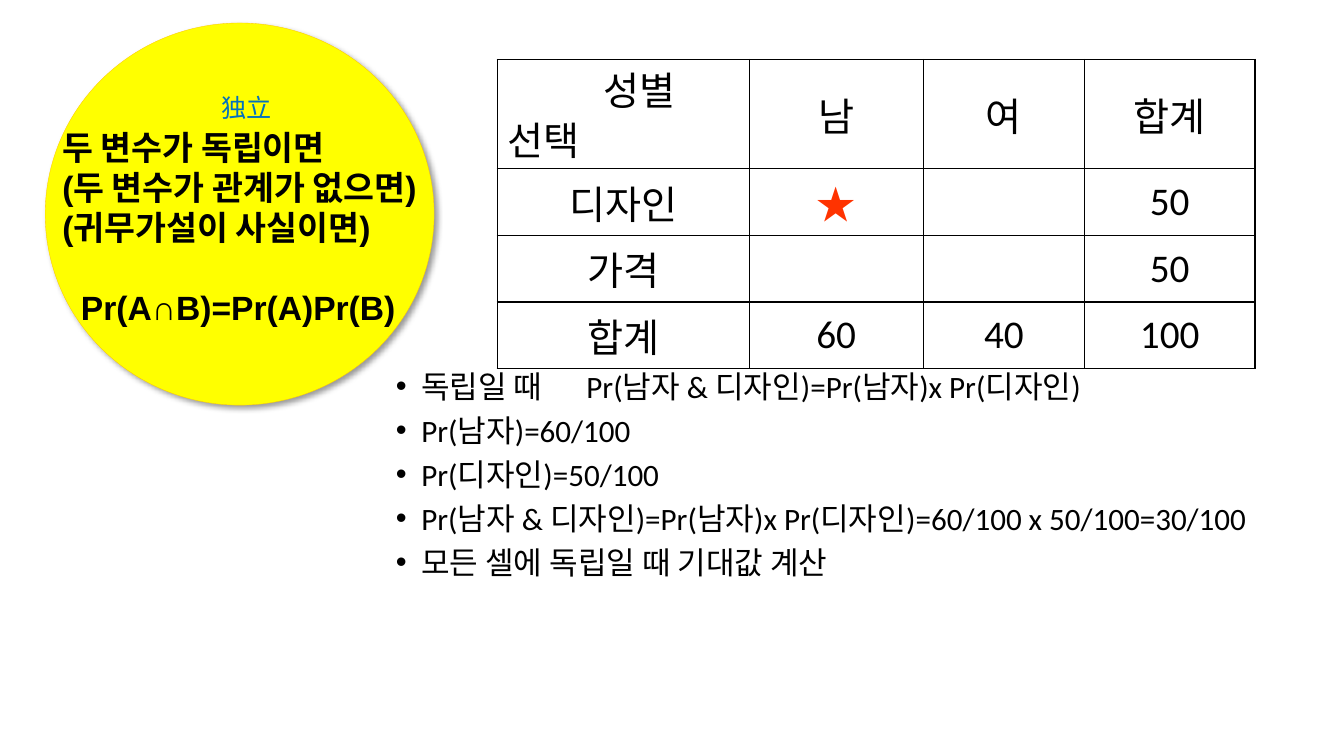
from dataclasses import dataclass

from lxml.etree import SubElement
from pptx import Presentation
from pptx.dml.color import RGBColor
from pptx.enum.shapes import MSO_SHAPE
from pptx.enum.text import MSO_ANCHOR, PP_ALIGN
from pptx.oxml.ns import qn
from pptx.util import Cm, Pt

RULE = ["두 변수가 독립이면", "(두 변수가 관계가 없으면)", "(귀무가설이 사실이면)"]
FORMULA = "Pr(A∩B)=Pr(A)Pr(B)"
LABEL = "独立"
STEPS = [
    "독립일 때\tPr(남자 & 디자인)=Pr(남자)x Pr(디자인)",
    "Pr(남자)=60/100",
    "Pr(디자인)=50/100",
    "Pr(남자 & 디자인)=Pr(남자)x Pr(디자인)=60/100 x 50/100=30/100",
    "모든 셀에 독립일 때 기대값 계산",
]
STAR = "★"
COUNTS = [
    ["성별\n선택", "남", "여", "합계"],
    ["디자인", STAR, "", "50"],
    ["가격", "", "", "50"],
    ["합계", "60", "40", "100"],
]
COLUMN_WIDTHS = [6.35, 4.39, 4.06, 4.3]
ROW_HEIGHTS = [2.75, 1.68, 1.68, 1.68]


@dataclass(frozen=True)
class Theme:
    ink: str = "000000"
    disc: str = "FFFF00"
    rim: str = "FFCC00"
    label: str = "0070C0"
    star: str = "FF3300"
    heading_font: str = "Arial"
    body_font: str = "Calibri"
    star_font: str = "Noto Sans CJK KR"
    rule_size: float = 24
    label_size: float = 18
    step_size: float = 22.2
    count_size: float = 28


THEME = Theme()


def style(paragraph, font, size, color=THEME.ink, bold=False):
    paragraph.font.name = font
    paragraph.font.size = Pt(size)
    paragraph.font.bold = bold
    paragraph.font.color.rgb = RGBColor.from_string(color)


def add_color(parent, color):
    fill = SubElement(parent, qn("a:solidFill"))
    return SubElement(fill, qn("a:srgbClr"), val=color)


def add_text(slide, left, top, width, height, lines, wrap=True):
    frame = slide.shapes.add_textbox(Cm(left), Cm(top), Cm(width), Cm(height)).text_frame
    frame.word_wrap = wrap
    frame.text = "\n".join(lines)
    return frame


def add_disc(slide):
    disc = slide.shapes.add_shape(MSO_SHAPE.OVAL, Cm(1.14), Cm(0.58), Cm(9.8), Cm(9.63))
    disc.fill.solid()
    disc.fill.fore_color.rgb = RGBColor.from_string(THEME.disc)
    disc.line.color.rgb = RGBColor.from_string(THEME.rim)
    disc.line.width = Pt(0.25)
    disc.shadow.inherit = False
    effects = disc.element.spPr.find(qn("a:effectLst"))
    shadow = SubElement(effects, qn("a:outerShdw"), blurRad=str(Pt(4)), dist=str(Pt(3)),
                        dir="2700000", algn="tl", rotWithShape="0")
    tint = SubElement(shadow, qn("a:srgbClr"), val=THEME.ink)
    SubElement(tint, qn("a:alpha"), val="40000")


def add_rule(slide):
    frame = add_text(slide, 1.32, 2.26, 10.39, 6.93, RULE + [FORMULA])
    frame.vertical_anchor = MSO_ANCHOR.MIDDLE
    for paragraph in frame.paragraphs:
        style(paragraph, THEME.heading_font, THEME.rule_size, bold=True)
        paragraph.line_spacing = Pt(28.7)
    formula = frame.paragraphs[-1]
    formula.space_before = Pt(28.7)
    formula._p.get_or_add_pPr().set("marL", str(Cm(0.47)))


def add_steps(slide):
    frame = add_text(slide, 9.73, 9.32, 23.01, 5.79, STEPS)
    for paragraph in frame.paragraphs:
        style(paragraph, THEME.body_font, THEME.step_size)
        paragraph.line_spacing = 0.8
        paragraph.space_before = Pt(10)
        properties = paragraph._p.get_or_add_pPr()
        properties.set("marL", str(Cm(0.64)))
        properties.set("indent", str(-Cm(0.64)))
        bullet_font = properties.makeelement(qn("a:buFont"), {"typeface": THEME.heading_font})
        bullet = properties.makeelement(qn("a:buChar"), {"char": "•"})
        tabs = properties.makeelement(qn("a:tabLst"), {})
        SubElement(tabs, qn("a:tab"), pos=str(Cm(4.8)), algn="l")
        defaults = properties.find(qn("a:defRPr"))
        for item in (bullet_font, bullet, tabs):
            defaults.addprevious(item)


def add_borders(cell):
    properties = cell._tc.get_or_add_tcPr()
    for position, side in enumerate(("lnL", "lnR", "lnT", "lnB")):
        border = properties.makeelement(qn("a:" + side), {"w": str(Pt(1))})
        add_color(border, THEME.ink)
        properties.insert(position, border)


def fill_cell(cell, text):
    cell.text = text
    cell.vertical_anchor = MSO_ANCHOR.MIDDLE
    cell.fill.background()
    add_borders(cell)
    for paragraph in cell.text_frame.paragraphs:
        paragraph.alignment = PP_ALIGN.CENTER
        paragraph.space_before = Pt(5.6)
        if text == STAR:
            style(paragraph, THEME.star_font, THEME.count_size, THEME.star, True)
        else:
            style(paragraph, THEME.body_font, THEME.count_size)


def add_counts(slide):
    table = slide.shapes.add_table(
        len(COUNTS), len(COUNTS[0]), Cm(12.53), Cm(1.5),
        Cm(sum(COLUMN_WIDTHS)), Cm(sum(ROW_HEIGHTS))).table
    table.first_row = table.horz_banding = False
    for column, width in zip(table.columns, COLUMN_WIDTHS):
        column.width = Cm(width)
    for row, height, texts in zip(table.rows, ROW_HEIGHTS, COUNTS):
        row.height = Cm(height)
        for cell, text in zip(row.cells, texts):
            fill_cell(cell, text)
    across, down = table.cell(0, 0).text_frame.paragraphs
    across.line_spacing = 0.9
    across._p.get_or_add_pPr().set("marL", str(Cm(0.83)))
    down.line_spacing = 0.7
    down.alignment = PP_ALIGN.LEFT


def add_label(slide):
    frame = add_text(slide, 5.33, 2.21, 1.8, 1.02, [LABEL], wrap=False)
    style(frame.paragraphs[0], THEME.heading_font, THEME.label_size, THEME.label)


def main():
    deck = Presentation()
    deck.slide_width, deck.slide_height = Cm(33.87), Cm(19.05)
    slide = deck.slides.add_slide(deck.slide_layouts[6])
    add_disc(slide)
    add_rule(slide)
    add_steps(slide)
    add_counts(slide)
    add_label(slide)
    deck.save("out.pptx")


if __name__ == "__main__":
    main()
